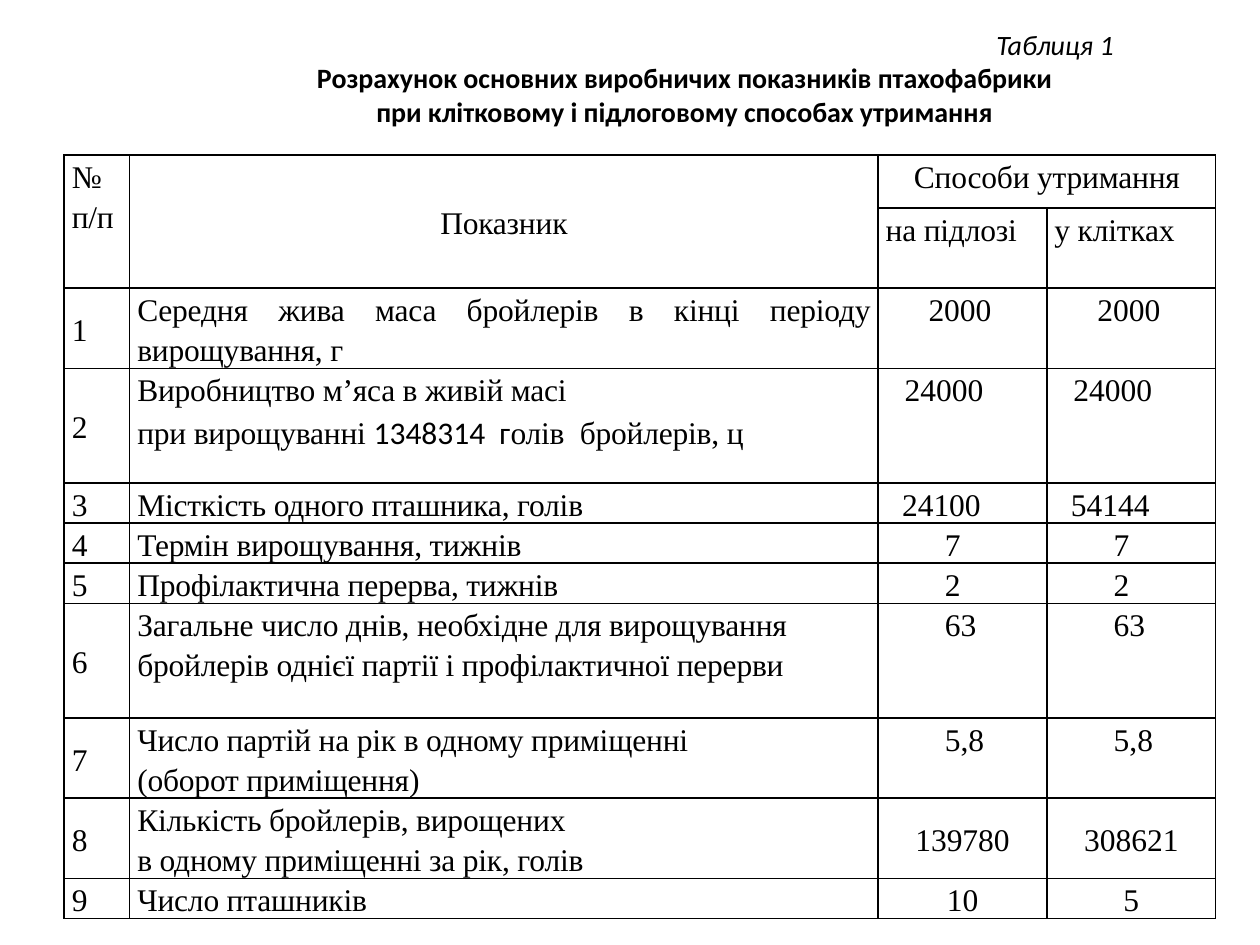
from lxml import etree
from pptx import Presentation
from pptx.dml.color import RGBColor
from pptx.enum.text import MSO_ANCHOR, MSO_AUTO_SIZE, PP_ALIGN
from pptx.oxml.ns import qn
from pptx.util import Inches, Pt

LEFT, CENTER, RIGHT, JUSTIFY = PP_ALIGN.LEFT, PP_ALIGN.CENTER, PP_ALIGN.RIGHT, PP_ALIGN.JUSTIFY
TOP, MIDDLE = MSO_ANCHOR.TOP, MSO_ANCHOR.MIDDLE
NO_FIT = MSO_AUTO_SIZE.NONE
COLORS = {"text": "000000", "border": "000000"}
SANS, SERIF = "Calibri", "Times New Roman"

COLUMNS = [0.52, 5.94, 1.34, 1.34]
ROWS = [0.42, 0.34, 0.6, 0.91, 0.3, 0.3, 0.3, 0.91, 0.6, 0.6, 0.3]
HEADERS = [
    (0, 0, ["№", "п/п"], JUSTIFY, TOP),
    (0, 1, ["Показник"], CENTER, MIDDLE),
    (0, 2, ["Способи утримання"], CENTER, TOP),
    (1, 2, ["на підлозі"], JUSTIFY, TOP),
    (1, 3, ["у клітках"], JUSTIFY, TOP),
]
INDICATORS = [
    (["Середня жива маса бройлерів в кінці періоду вирощування, г"], "2000", "2000", 0.37),
    (["Виробництво м’яса в живій масі",
      [("при вирощуванні ", SERIF), ("1348314  г", SANS), ("олів  бройлерів, ц", SERIF)]],
     "24000", "24000", 0.18),
    (["Місткість одного пташника, голів"], "24100", "54144", 0.16),
    (["Термін вирощування, тижнів"], "7", "7", 0.5),
    (["Профілактична перерва, тижнів"], "2", "2", 0.5),
    (["Загальне число днів, необхідне для вирощування бройлерів однієї партії "
      "і профілактичної перерви"], "63", "63", 0.5),
    (["Число партій на рік в одному приміщенні", "(оборот приміщення)"], "5,8", "5,8", 0.5),
    (["Кількість бройлерів, вирощених", "в одному приміщенні за рік, голів"],
     "139780", "308621", None),
    (["Число пташників"], "10", "5", None),
]


class SlideBuilder:
    """Holds the text style and the current slide, and adds its elements."""

    def __init__(self, prs):
        self.s = prs.slides.add_slide(prs.slide_layouts[5])

    def paragraph(self, tf, first, align, indent=0):
        p = tf.paragraphs[0] if first else tf.add_paragraph()
        p.alignment = align
        if indent:
            pPr = p._p.get_or_add_pPr()
            pPr.set("marL", "0")
            pPr.set("indent", str(Inches(indent)))
        return p

    def run(self, p, text, font, size, bold=False, italic=False, spacing=0):
        r = p.add_run()
        r.text = text
        r.font.name, r.font.size = font, Pt(size)
        r.font.bold, r.font.italic = bold, italic
        r.font.color.rgb = RGBColor.from_string(COLORS["text"])
        if spacing:
            r._r.get_or_add_rPr().set("spc", str(spacing))

    def title(self, lines, left, top, width, height):
        sp = self.s.shapes.title
        sp.left, sp.top = Inches(left), Inches(top)
        sp.width, sp.height = Inches(width), Inches(height)
        tf = sp.text_frame
        tf.word_wrap, tf.auto_size, tf.vertical_anchor = True, NO_FIT, MIDDLE
        for i, (text, align, indent, bold) in enumerate(lines):
            p = self.paragraph(tf, i == 0, align, indent)
            self.run(p, text, SANS, 16, bold=bold, italic=not bold)

    def table(self, left, top, columns, rows):
        frame = self.s.shapes.add_table(
            len(rows), len(columns), Inches(left), Inches(top),
            Inches(sum(columns)), Inches(sum(rows)))
        table = frame.table
        table.first_row = table.horz_banding = False
        for column, width in zip(table.columns, columns):
            column.width = Inches(width)
        for row, height in zip(table.rows, rows):
            row.height = Inches(height)
        for cell in table.iter_cells():
            self.borders(cell)
            cell.fill.background()
        return table

    def borders(self, cell):
        tcPr = cell._tc.get_or_add_tcPr()
        for side in ("a:lnL", "a:lnR", "a:lnT", "a:lnB"):
            ln = etree.SubElement(tcPr, qn(side), w=str(Pt(1)))
            fill = etree.SubElement(ln, qn("a:solidFill"))
            etree.SubElement(fill, qn("a:srgbClr"), val=COLORS["border"])

    def cell(self, cell, lines, align=LEFT, anchor=TOP, margin=0.06, indent=0, spacing=-10):
        cell.margin_left = cell.margin_right = Inches(margin)
        cell.margin_top = cell.margin_bottom = 0
        cell.vertical_anchor = anchor
        for i, line in enumerate(lines):
            p = self.paragraph(cell.text_frame, i == 0, align, indent)
            p.line_spacing = 1.15
            parts = [(line, SERIF)] if isinstance(line, str) else line
            for text, font in parts:
                self.run(p, text, font, 18, spacing=spacing if font == SERIF else 0)


def main():
    prs = Presentation()
    prs.slide_width, prs.slide_height = Inches(10), Inches(7.5)
    slide = SlideBuilder(prs)
    slide.title([
        ("Таблиця 1", RIGHT, 0.38, False),
        ("Розрахунок основних виробничих показників птахофабрики", CENTER, 0.47, True),
        ("при клітковому і підлоговому способах утримання", CENTER, 0.47, True),
    ], 1.46, 0.16, 7.48, 0.91)

    table = slide.table(0.51, 1.23, COLUMNS, ROWS)
    for start, end in [((0, 0), (1, 0)), ((0, 1), (1, 1)), ((0, 2), (0, 3))]:
        table.cell(*start).merge(table.cell(*end))
    for row, col, lines, align, anchor in HEADERS:
        slide.cell(table.cell(row, col), lines, align, anchor)

    for number, (lines, floor, cages, indent) in enumerate(INDICATORS, 1):
        row = number + 1
        slide.cell(table.cell(row, 0), [str(number)], JUSTIFY, MIDDLE)
        slide.cell(table.cell(row, 1), lines, JUSTIFY if number == 1 else LEFT)
        align, anchor = (CENTER, MIDDLE) if indent is None else (LEFT, TOP)
        for col, value in enumerate((floor, cages), 2):
            slide.cell(table.cell(row, col), [value], align, anchor, 0.03, indent, 0)

    prs.save("out.pptx")


if __name__ == "__main__":
    main()
